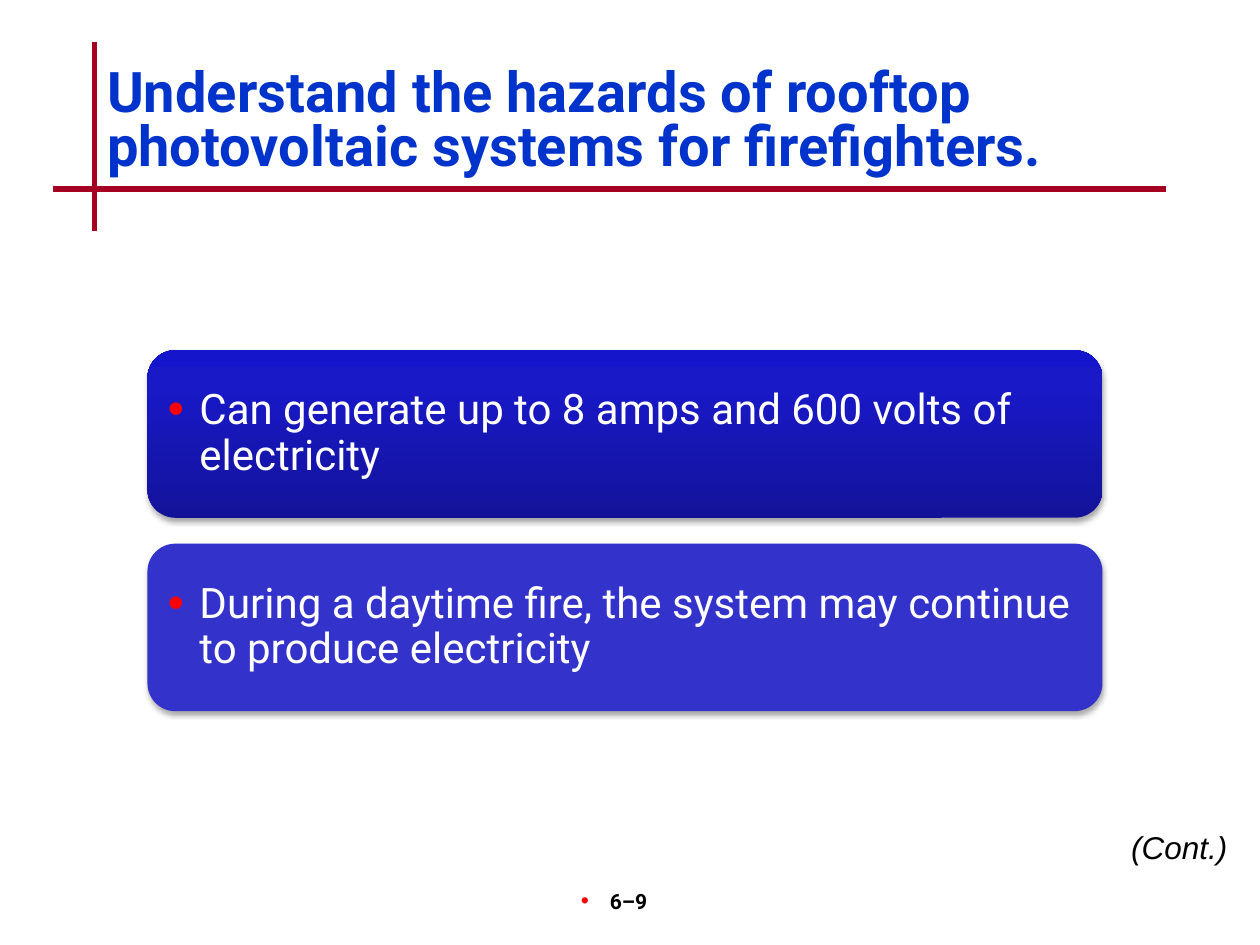
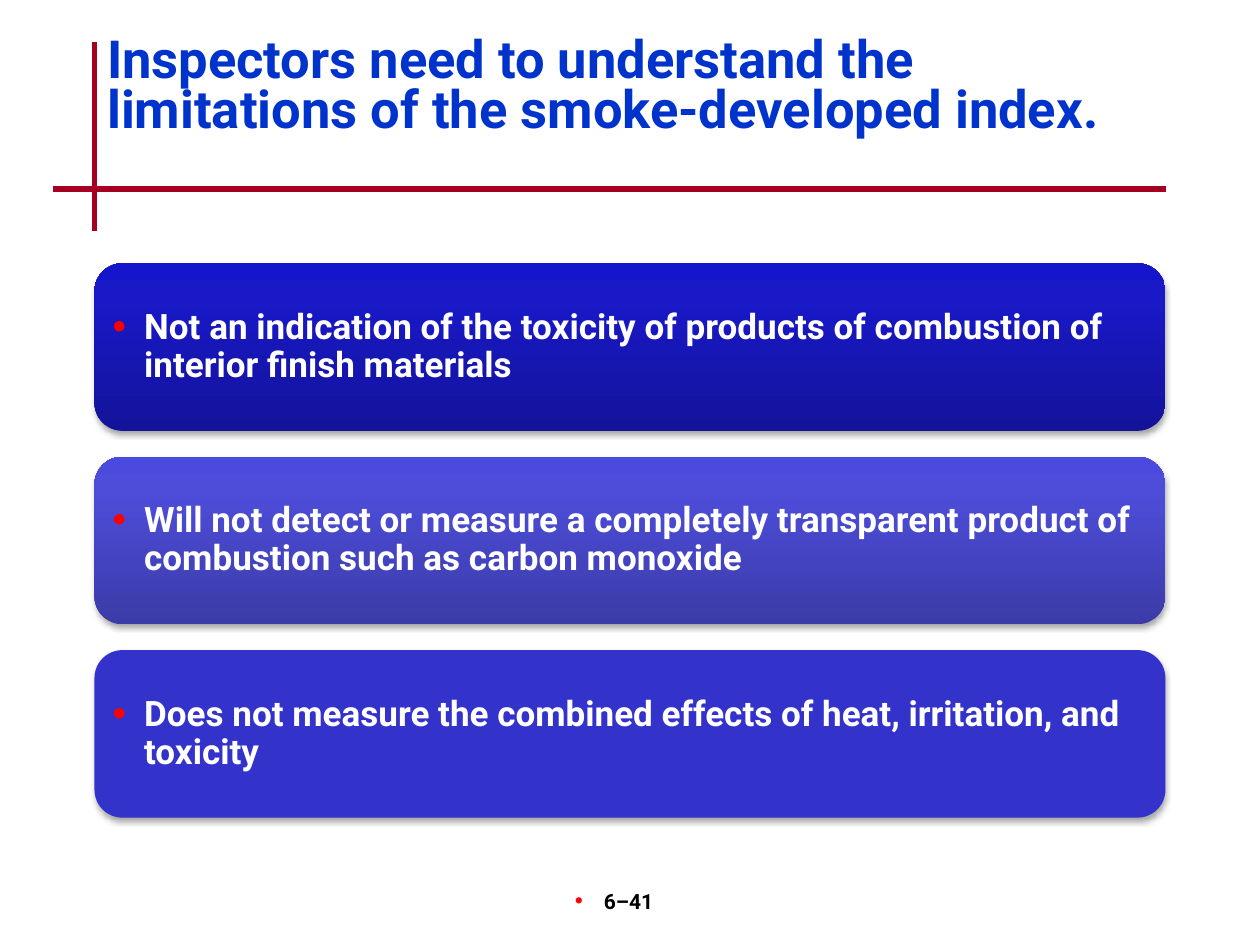
from copy import deepcopy
from dataclasses import dataclass

from lxml import etree
from pptx import Presentation
from pptx import util as u
from pptx.dml import color as dml
from pptx.enum import shapes, text
from pptx.oxml import ns


# Shared look
@dataclass(frozen=True)
class Theme:
    font: str = "Roboto"
    note_font: str = "Arial"
    title: str = "0033CC"
    rule: str = "A50021"
    bullet: str = "FF0000"
    ink: str = "000000"
    card_ink: str = "FFFFFF"
    card: str = "3333CC"
    dark: tuple[str, ...] = ("13139A", "1919C8", "1515CC")
    medium: tuple[str, ...] = ("3B3BA8", "4D4DDA", "4A4ADE")
    stops: tuple[float, ...] = (0, 0.8, 1)
    rule_width: float = 3
    note_size: float = 18
    number_size: float = 12


THEME = Theme()
RULES = ((0.75, 0.33, 0.75, 1.83), (0.42, 1.5, 9.25, 1.5))
CARD_HEIGHT = 1.33
CARD_STEP = 1.535


@dataclass(frozen=True)
class Card:
    words: str
    colors: tuple[str, ...]


@dataclass(frozen=True)
class Page:
    title: str
    title_top: float
    title_size: float
    number: str
    left: float
    top: float
    width: float
    card_size: float
    card_bold: bool
    card_inset: float
    cards: tuple[Card, ...]
    note: str = ""


PAGES = (
    Page("Understand the hazards of rooftop photovoltaic systems for firefighters.",
         0.5, 32, "6–9", 1.17, 2.78, 7.58, 24, False, 0.1,
         (Card("Can generate up to 8 amps and 600 volts of electricity", THEME.dark),
          Card("During a daytime fire, the system may continue to produce electricity",
               (THEME.card,))),
         "(Cont.)"),
    Page("Inspectors need to understand the limitations of the smoke-developed index.",
         0.25, 30, "6–41", 0.75, 2.09, 8.5, 20, True, 0.08,
         (Card("Not an indication of the toxicity of products of combustion of "
               "interior finish materials", THEME.dark),
          Card("Will not detect or measure a completely transparent product of "
               "combustion such as carbon monoxide", THEME.medium),
          Card("Does not measure the combined effects of heat, irritation, and toxicity",
               (THEME.card,)))),
)


# Text helpers
def set_values(target, **values) -> None:
    for name, value in values.items():
        setattr(target, name, value)


def add_bullet(para, indent: float) -> None:
    props = para._p.get_or_add_pPr()
    props.set("marL", str(u.Inches(indent)))
    props.set("indent", str(-u.Inches(indent)))
    tint = etree.SubElement(props, ns.qn("a:buClr"))
    etree.SubElement(tint, ns.qn("a:srgbClr"), val=THEME.bullet)
    etree.SubElement(props, ns.qn("a:buSzPct"), val="110000")
    etree.SubElement(props, ns.qn("a:buFont"), typeface="Arial")
    etree.SubElement(props, ns.qn("a:buChar"), char="•")


def write(shape, words: str, size: float, color: str, *, font: str = THEME.font,
          bold: bool = False, italic: bool = False, align=text.PP_ALIGN.LEFT,
          anchor=text.MSO_ANCHOR.TOP, spacing: float = 1.0, indent: float = 0) -> None:
    set_values(shape.text_frame, word_wrap=True, vertical_anchor=anchor,
               auto_size=text.MSO_AUTO_SIZE.NONE)
    para = shape.text_frame.paragraphs[0]
    if indent:
        add_bullet(para, indent)
    set_values(para, alignment=align, line_spacing=spacing)
    span = para.add_run()
    span.text = words
    set_values(span.font, name=font, size=u.Pt(size), bold=bold, italic=italic)
    span.font.color.rgb = dml.RGBColor.from_string(color)


# Slide parts
def add_rules(slide) -> None:
    for ends in RULES:
        rule = slide.shapes.add_connector(shapes.MSO_CONNECTOR.STRAIGHT,
                                          *map(u.Inches, ends))
        rule.line.color.rgb = dml.RGBColor.from_string(THEME.rule)
        rule.line.width = u.Pt(THEME.rule_width)
        etree.SubElement(rule._element.spPr, ns.qn("a:effectLst"))


def add_title(slide, page: Page) -> None:
    title = slide.shapes.title
    set_values(title, left=u.Inches(0.75), top=u.Inches(page.title_top),
               width=u.Inches(8.5), height=u.Inches(1))
    write(title, page.title, page.title_size, THEME.title, bold=True, spacing=0.8)


def add_number(slide, number: str) -> None:
    box = slide.shapes.add_textbox(*map(u.Inches, (3.92, 7, 2.08, 0.5)))
    # The wider right margin balances the bullet indent
    box.text_frame.margin_right = u.Inches(0.27)
    write(box, number, THEME.number_size, THEME.ink, bold=True,
          align=text.PP_ALIGN.CENTER, indent=0.23)


def add_note(slide, note: str) -> None:
    box = slide.shapes.add_textbox(*map(u.Inches, (8.17, 6.52, 1.67, 0.4)))
    write(box, note, THEME.note_size, THEME.ink, font=THEME.note_font,
          italic=True, align=text.PP_ALIGN.RIGHT)


def fill_card(box, colors: tuple[str, ...]) -> None:
    if len(colors) == 1:
        box.fill.solid()
        box.fill.fore_color.rgb = dml.RGBColor.from_string(colors[0])
        return
    box.fill.gradient()
    box.fill.gradient_angle = 90
    stop_list = box._element.spPr.find(".//" + ns.qn("a:gsLst"))
    stop_list.append(deepcopy(stop_list[-1]))
    for stop, position, color in zip(box.fill.gradient_stops, THEME.stops, colors):
        stop.position = position
        stop.color.rgb = dml.RGBColor.from_string(color)


def add_shadow(box) -> None:
    box.shadow.inherit = False
    effects = box._element.spPr.find(ns.qn("a:effectLst"))
    shadow = etree.SubElement(effects, ns.qn("a:outerShdw"), blurRad=str(u.Pt(3.1)),
                              dist=str(u.Pt(1.8)), dir="5400000", rotWithShape="0")
    tint = etree.SubElement(shadow, ns.qn("a:srgbClr"), val="000000")
    etree.SubElement(tint, ns.qn("a:alpha"), val="35000")


def add_cards(slide, page: Page) -> None:
    for row, card in enumerate(page.cards):
        place = (page.left, page.top + row * CARD_STEP, page.width, CARD_HEIGHT)
        box = slide.shapes.add_shape(shapes.MSO_SHAPE.ROUNDED_RECTANGLE,
                                     *map(u.Inches, place))
        fill_card(box, card.colors)
        box.line.fill.background()
        add_shadow(box)
        inset = u.Inches(page.card_inset)
        set_values(box.text_frame, margin_left=inset, margin_top=inset,
                   margin_right=inset, margin_bottom=inset)
        write(box, card.words, page.card_size, THEME.card_ink, bold=page.card_bold,
              anchor=text.MSO_ANCHOR.MIDDLE, spacing=0.9, indent=0.25)


def main() -> None:
    deck = Presentation()
    set_values(deck, slide_width=u.Inches(10), slide_height=u.Inches(7.5))
    for page in PAGES:
        slide = deck.slides.add_slide(deck.slide_layouts.get_by_name("Title Only"))
        add_rules(slide)
        add_number(slide, page.number)
        add_title(slide, page)
        add_cards(slide, page)
        if page.note:
            add_note(slide, page.note)
    deck.save("out.pptx")


if __name__ == "__main__":
    main()
